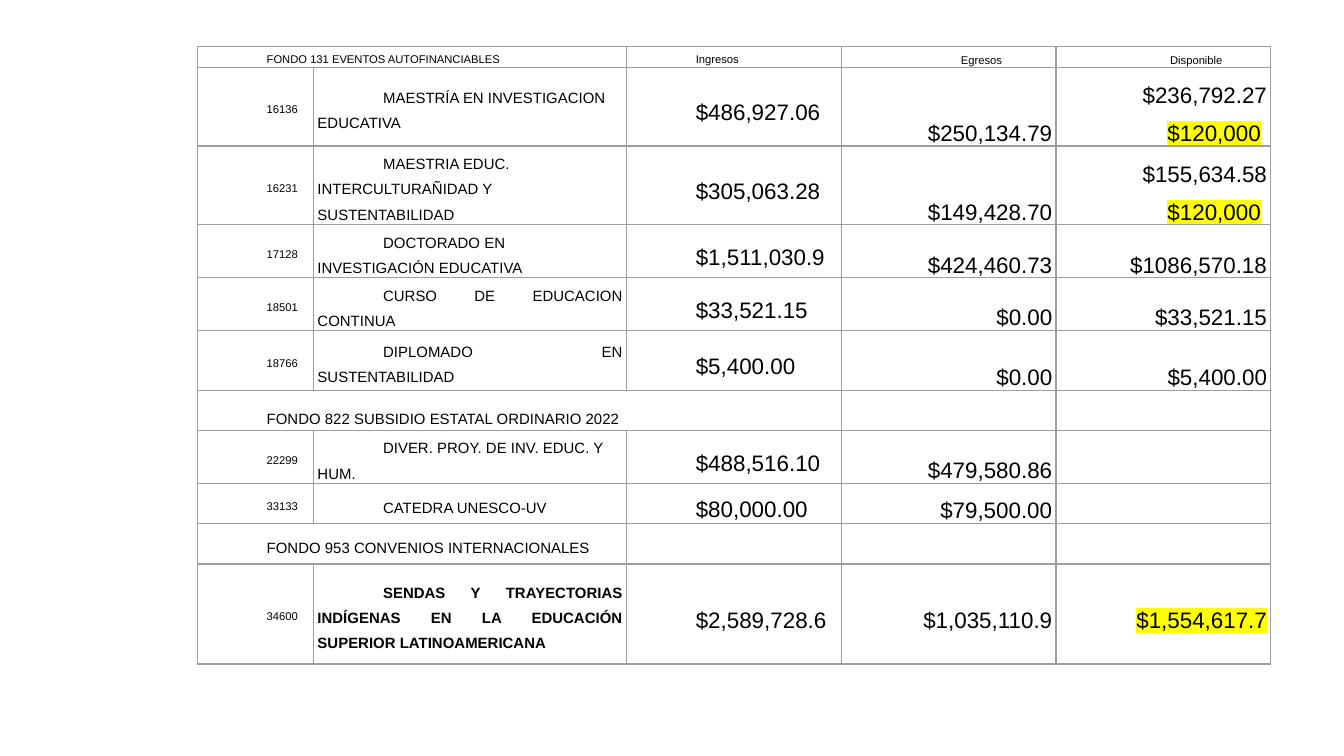
from dataclasses import dataclass
from typing import Optional

from lxml import etree
from pptx import Presentation
from pptx.dml.color import RGBColor
from pptx.enum import text
from pptx.oxml import ns
from pptx.util import Cm, Length, Pt

LEFT, CENTER = text.PP_ALIGN.LEFT, text.PP_ALIGN.CENTER
RIGHT, JUSTIFY = text.PP_ALIGN.RIGHT, text.PP_ALIGN.JUSTIFY
MIDDLE, BOTTOM = text.MSO_ANCHOR.MIDDLE, text.MSO_ANCHOR.BOTTOM


@dataclass(frozen=True)
class Theme:
    font: str = "Arial"
    ink: str = "000000"
    border: str = "9E9E9E"
    highlight: str = "FFFF00"
    border_width: Length = Pt(0.75)
    small: Length = Pt(6)
    label: Length = Pt(8)
    amount: Length = Pt(12)
    line_spacing: float = 1.5
    inset: Length = Cm(0.07)
    indent: Length = Cm(1.24)


@dataclass(frozen=True)
class Project:
    height: float
    code: str
    name: str
    income: str
    spent: str
    available: str = ""
    reserved: str = ""
    align: text.PP_ALIGN = LEFT
    featured: bool = False


@dataclass(frozen=True)
class Fund:
    height: float
    title: str
    span: int
    size: Length
    headings: tuple[str, ...] = ()
    tail: str = ""


THEME = Theme()
COLUMNS = (2.2, 5.91, 4.06, 4.06, 4.06)
ROWS = (
    Fund(0.39, "FONDO 131 EVENTOS AUTOFINANCIABLES", 2, THEME.small,
         ("Ingresos", "Egresos", "Disponible")),
    Project(1.49, "16136", "MAESTRÍA EN INVESTIGACION EDUCATIVA",
            "$486,927.06", "$250,134.79", "$236,792.27", "$120,000"),
    Project(1.49, "16231", "MAESTRIA EDUC. INTERCULTURAÑIDAD Y SUSTENTABILIDAD",
            "$305,063.28", "$149,428.70", "$155,634.58", "$120,000"),
    Project(1, "17128", "DOCTORADO EN INVESTIGACIÓN EDUCATIVA",
            "$1,511,030.9", "$424,460.73", "$1086,570.18"),
    Project(1, "18501", "CURSO DE EDUCACION CONTINUA",
            "$33,521.15", "$0.00", "$33,521.15", align=JUSTIFY),
    Project(1.13, "18766", "DIPLOMADO EN SUSTENTABILIDAD",
            "$5,400.00", "$0.00", "$5,400.00", align=JUSTIFY),
    Fund(0.76, "FONDO 822 SUBSIDIO ESTATAL ORDINARIO 2022", 3, THEME.label, tail=" "),
    Project(1, "22299", "DIVER. PROY. DE INV. EDUC. Y HUM.",
            "$488,516.10", "$479,580.86"),
    Project(0.76, "33133", "CATEDRA UNESCO-UV",
            "$80,000.00", "$79,500.00", align=JUSTIFY),
    Fund(0.76, "FONDO 953 CONVENIOS INTERNACIONALES", 2, THEME.label),
    Project(1.89, "34600",
            "SENDAS Y TRAYECTORIAS INDÍGENAS EN LA EDUCACIÓN SUPERIOR LATINOAMERICANA",
            "$2,589,728.6", "$1,035,110.9", "$1,554,617.7", align=JUSTIFY, featured=True),
)


def style_cell(cell) -> None:
    """Clear the banding, draw the borders and keep empty cells small."""
    cell.fill.background()
    cell.margin_left = cell.margin_right = THEME.inset
    cell.margin_top = cell.margin_bottom = 0
    cell.text_frame.paragraphs[0].font.size = THEME.small
    properties = cell._tc.get_or_add_tcPr()
    for position, side in enumerate(("lnL", "lnR", "lnT", "lnB")):
        line = etree.Element(ns.qn(f"a:{side}"), w=str(int(THEME.border_width)))
        fill = etree.SubElement(line, ns.qn("a:solidFill"))
        etree.SubElement(fill, ns.qn("a:srgbClr"), val=THEME.border)
        properties.insert(position, line)


def write(para, words: str, size: Length, align: text.PP_ALIGN = LEFT,
          bold: bool = False, marked: bool = False):
    para.alignment = align
    para.line_spacing = THEME.line_spacing
    para._p.get_or_add_pPr().set("marL", "0")
    para._p.get_or_add_pPr().set("indent", str(int(THEME.indent)))
    para.font.name = THEME.font
    para.font.size = size
    para.font.bold = bold
    para.font.color.rgb = RGBColor.from_string(THEME.ink)
    span = para.add_run()
    span.text = words
    if marked:
        mark = etree.SubElement(span._r.get_or_add_rPr(), ns.qn("a:highlight"))
        etree.SubElement(mark, ns.qn("a:srgbClr"), val=THEME.highlight)
    return span


def fill_cell(cell, words: str, size: Length, align: text.PP_ALIGN = LEFT,
              anchor: text.MSO_ANCHOR = MIDDLE, bold: bool = False,
              marked: bool = False) -> None:
    cell.vertical_anchor = anchor
    if words:
        write(cell.text_frame.paragraphs[0], words, size, align, bold, marked)


def add_reserve(cell, words: str) -> None:
    """Add a marked amount, set in from the right edge by one wide space."""
    para = cell.text_frame.add_paragraph()
    write(para, words, THEME.amount, RIGHT, marked=True)
    gap = para.add_run()
    gap.text = " "
    gap._r.get_or_add_rPr().set("spc", "660")


def draw_fund(cells: list, fund: Fund) -> None:
    cells[0].merge(cells[fund.span - 1])
    fill_cell(cells[0], fund.title, fund.size)
    if fund.tail:
        tail = cells[0].text_frame.paragraphs[0].add_run()
        tail.text = fund.tail
        tail.font.size = THEME.amount
    layout = ((LEFT, MIDDLE), (CENTER, BOTTOM), (CENTER, BOTTOM))
    for cell, heading, (align, anchor) in zip(cells[2:], fund.headings, layout):
        fill_cell(cell, heading, fund.size, align, anchor)


def draw_project(cells: list, project: Project) -> None:
    anchor = MIDDLE if project.featured else BOTTOM
    code, name, income, spent, available = cells
    fill_cell(code, project.code, THEME.small)
    fill_cell(name, project.name, THEME.label, project.align, bold=project.featured)
    fill_cell(income, project.income, THEME.amount)
    fill_cell(spent, project.spent, THEME.amount, RIGHT, anchor)
    fill_cell(available, project.available, THEME.amount, RIGHT, anchor,
              marked=project.featured)
    if project.reserved:
        add_reserve(available, project.reserved)


def main() -> None:
    deck = Presentation()
    deck.slide_width, deck.slide_height = Cm(25.4), Cm(14.29)
    page = deck.slides.add_slide(deck.slide_layouts[6])
    table = page.shapes.add_table(
        len(ROWS), len(COLUMNS), Cm(3.73), Cm(0.88),
        Cm(sum(COLUMNS)), Cm(sum(row.height for row in ROWS))).table
    table.first_row = table.horz_banding = False
    for column, width in zip(table.columns, COLUMNS):
        column.width = Cm(width)
    for table_row, row in zip(table.rows, ROWS):
        table_row.height = Cm(row.height)
        cells = list(table_row.cells)
        for cell in cells:
            style_cell(cell)
        if isinstance(row, Fund):
            draw_fund(cells, row)
        else:
            draw_project(cells, row)
    deck.save("out.pptx")


if __name__ == "__main__":
    main()
